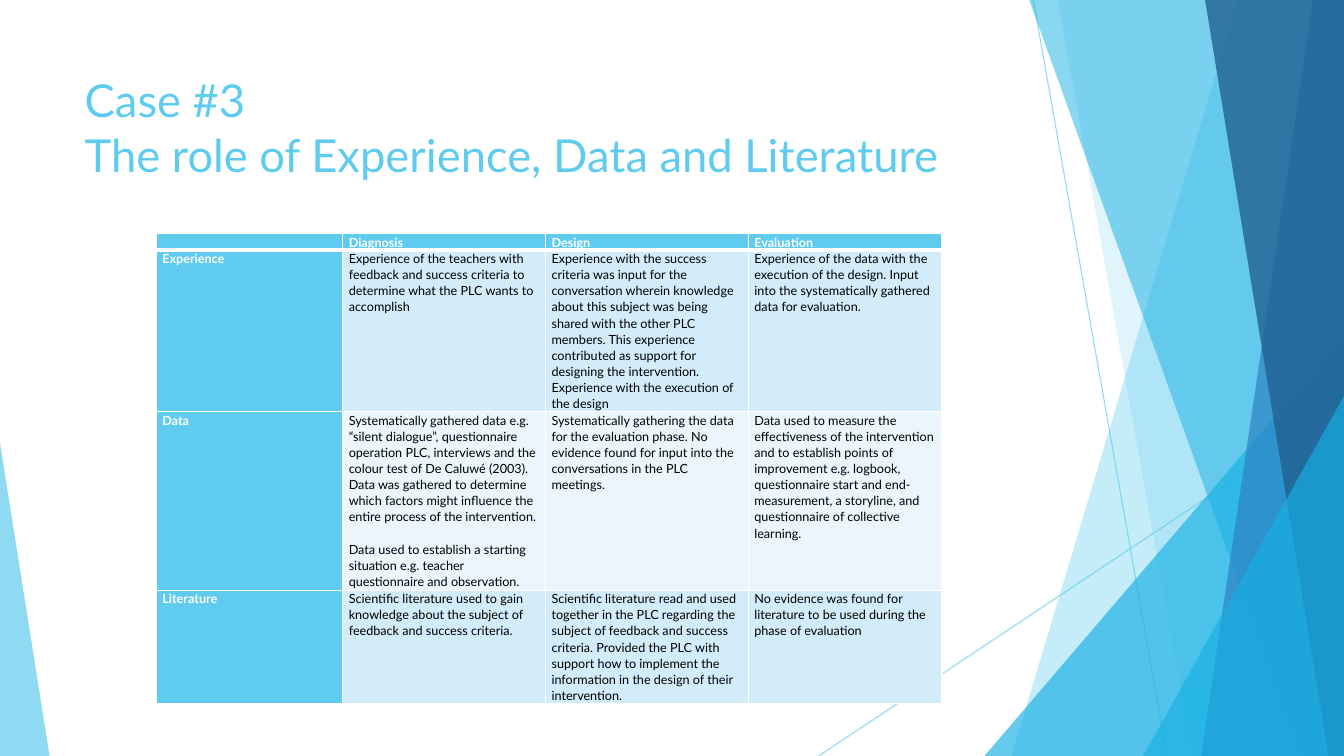
from lxml import etree
from pptx import Presentation
from pptx import util as u
from pptx.dml.color import RGBColor
from pptx.enum import shapes, text
from pptx.oxml.ns import qn

FONT = "Lato"
WIDTH, HEIGHT = 33.87, 19.05
SKY, CYAN, BLUE, NAVY = "5FCBEF", "17B0E4", "2E83C3", "226292"
WHITE, BLACK = "FFFFFF", "000000"
ROW_TINTS = ["D2ECF9", "EAF6FC"]

# Decoration, back to front: ("band", top x, bottom x) reaches the right edge,
# ("corner", left, top, width, apex) stands on the bottom edge
FACETS = [
    (("band", 31.2, 25.49), SKY, 36),
    (("band", 26.66, 30.05), SKY, 20),
    (("corner", 24.81, 8.47, 9.05, 1), CYAN, 66),
    (("band", 25.94, 32.79), CYAN, 50),
    (("band", 33.09, 30.27), BLUE, 70),
    (("band", 30.37, 33.48), NAVY, 80),
    (("corner", 28.81, 9.98, 5.06, 1), CYAN, 66),
    (("corner", 0, 11.16, 1.25, 0), SKY, 70),
]
RAYS = [(26.04, 0, 29.41, HEIGHT), (WIDTH, 10.24, 20.63, HEIGHT)]

COLUMN_WIDTHS = [4.7, 5.11, 5.11, 4.88]
ROW_HEIGHTS = [0.41, 4.06, 4.5, 2.85]
# Paragraphs in a cell are parted by a line feed
ROWS = [
    ["", "Diagnosis", "Design", "Evaluation"],
    ["Experience",
     "Experience of the teachers with feedback and success criteria to determine "
     "what the PLC wants to accomplish",
     "Experience with the success criteria was input for the conversation wherein "
     "knowledge about this subject was being shared with the other PLC members. This "
     "experience contributed as support for designing the intervention.\n"
     "Experience with the execution of the design",
     "Experience of the data with the execution of the design. Input into the "
     "systematically gathered data for evaluation."],
    ["Data",
     "Systematically gathered data e.g. “silent dialogue”, questionnaire operation PLC, "
     "interviews and the colour test of De Caluwé (2003). Data was gathered to determine "
     "which factors might influence the entire process of the intervention.\n"
     "Data used to establish a starting situation e.g. teacher questionnaire and "
     "observation.",
     "Systematically gathering the data for the evaluation phase. No evidence found for "
     "input into the conversations in the PLC meetings.",
     "Data used to measure the effectiveness of the intervention and to establish points "
     "of improvement e.g. logbook, questionnaire start and end-measurement, a storyline, "
     "and questionnaire of collective learning."],
    ["Literature",
     "Scientific literature used to gain knowledge about the subject of feedback and "
     "success criteria.",
     "Scientific literature read and used together in the PLC regarding the subject of "
     "feedback and success criteria. Provided the PLC with support how to implement the "
     "information in the design of their intervention.",
     "No evidence was found for literature to be used during the phase of evaluation"],
]


def paint(color_format, value):
    color_format.rgb = RGBColor.from_string(value)


def set_opacity(parent, percent):
    for color in parent.iter(qn("a:srgbClr")):
        etree.SubElement(color, qn("a:alpha"), val=str(percent * 1000))


def style_font(font, size, color, bold=False):
    font.name, font.size, font.bold = FONT, u.Pt(size), bold
    paint(font.color, color)


def add_facet(slide, form, color, opacity):
    kind, *measures = form
    if kind == "band":
        top_x, bottom_x = measures
        builder = slide.shapes.build_freeform(u.Cm(top_x), 0)
        corners = [(WIDTH, 0), (WIDTH, HEIGHT), (bottom_x, HEIGHT)]
        builder.add_line_segments([(u.Cm(x), u.Cm(y)) for x, y in corners])
        facet = builder.convert_to_shape()
    else:
        left, top, width, apex = measures
        facet = slide.shapes.add_shape(
            shapes.MSO_SHAPE.ISOSCELES_TRIANGLE,
            u.Cm(left), u.Cm(top), u.Cm(width), u.Cm(HEIGHT - top))
        facet.adjustments[0] = apex
    facet.shadow.inherit = False
    facet.line.fill.background()
    facet.fill.solid()
    paint(facet.fill.fore_color, color)
    set_opacity(facet._element.spPr, opacity)


def add_decoration(slide):
    for ends in RAYS:
        ray = slide.shapes.add_connector(
            shapes.MSO_CONNECTOR.STRAIGHT, *(u.Cm(end) for end in ends))
        ray.line.width = u.Pt(0.75)
        paint(ray.line.color, SKY)
        set_opacity(ray._element.spPr, 70)
        etree.SubElement(ray._element.spPr, qn("a:effectLst"))
    for facet in FACETS:
        add_facet(slide, *facet)


def place_title(slide, left, top, width, height):
    title = slide.shapes.title
    title.left, title.top, title.width, title.height = map(u.Cm, (left, top, width, height))
    frame = title.text_frame
    frame.text = "Case #3\vThe role of Experience, Data and Literature"
    frame.auto_size = text.MSO_AUTO_SIZE.NONE
    frame.vertical_anchor = text.MSO_ANCHOR.TOP
    para = frame.paragraphs[0]
    para.alignment = text.PP_ALIGN.LEFT
    for span in para.runs:
        style_font(span.font, 32.4, SKY)
    # Bring the title in front of the decoration
    slide.shapes._spTree.append(title._element)


def set_borders(cell, bottom_width):
    properties = cell._tc.get_or_add_tcPr()
    sides = {"lnL": 1, "lnR": 1, "lnT": 1, "lnB": bottom_width}
    for position, (side, width) in enumerate(sides.items()):
        line = etree.Element(qn("a:" + side), w=str(u.Pt(width)))
        fill = etree.SubElement(line, qn("a:solidFill"))
        etree.SubElement(fill, qn("a:srgbClr"), val=WHITE)
        properties.insert(position, line)


def fill_cell(cell, words, row, column):
    is_heading = row == 0 or column == 0
    cell.margin_left = cell.margin_right = u.Cm(0.15)
    cell.margin_top = cell.margin_bottom = 0
    cell.fill.solid()
    paint(cell.fill.fore_color, SKY if is_heading else ROW_TINTS[(row - 1) % 2])
    set_borders(cell, 3 if row == 0 else 1)
    cell.text_frame.text = words
    for para in cell.text_frame.paragraphs:
        para.line_spacing = 1.07
        for span in para.runs:
            style_font(span.font, 9, WHITE if is_heading else BLACK, is_heading)
        if not para.runs:  # keeps the empty cell as low as its row
            etree.SubElement(para._p, qn("a:endParaRPr"), sz="900")


def add_role_table(slide, left, top):
    table = slide.shapes.add_table(
        len(ROWS), len(COLUMN_WIDTHS), u.Cm(left), u.Cm(top),
        u.Cm(sum(COLUMN_WIDTHS)), u.Cm(sum(ROW_HEIGHTS))).table
    table.horz_banding = False
    for column, width in zip(table.columns, COLUMN_WIDTHS):
        column.width = u.Cm(width)
    for row, height in zip(table.rows, ROW_HEIGHTS):
        row.height = u.Cm(height)
    for row, entries in enumerate(ROWS):
        for column, words in enumerate(entries):
            fill_cell(table.cell(row, column), words, row, column)
    # One free line between the two uses of data in the diagnosis
    table.cell(2, 1).text_frame.paragraphs[1].space_before = u.Pt(11.5)


def main():
    deck = Presentation()
    deck.slide_width, deck.slide_height = u.Cm(WIDTH), u.Cm(HEIGHT)
    slide = deck.slides.add_slide(deck.slide_layouts.get_by_name("Title Only"))
    add_decoration(slide)
    place_title(slide, 1.88, 1.7, 23.88, 3.66)
    add_role_table(slide, 3.94, 5.89)
    deck.save("out.pptx")


if __name__ == "__main__":
    main()
